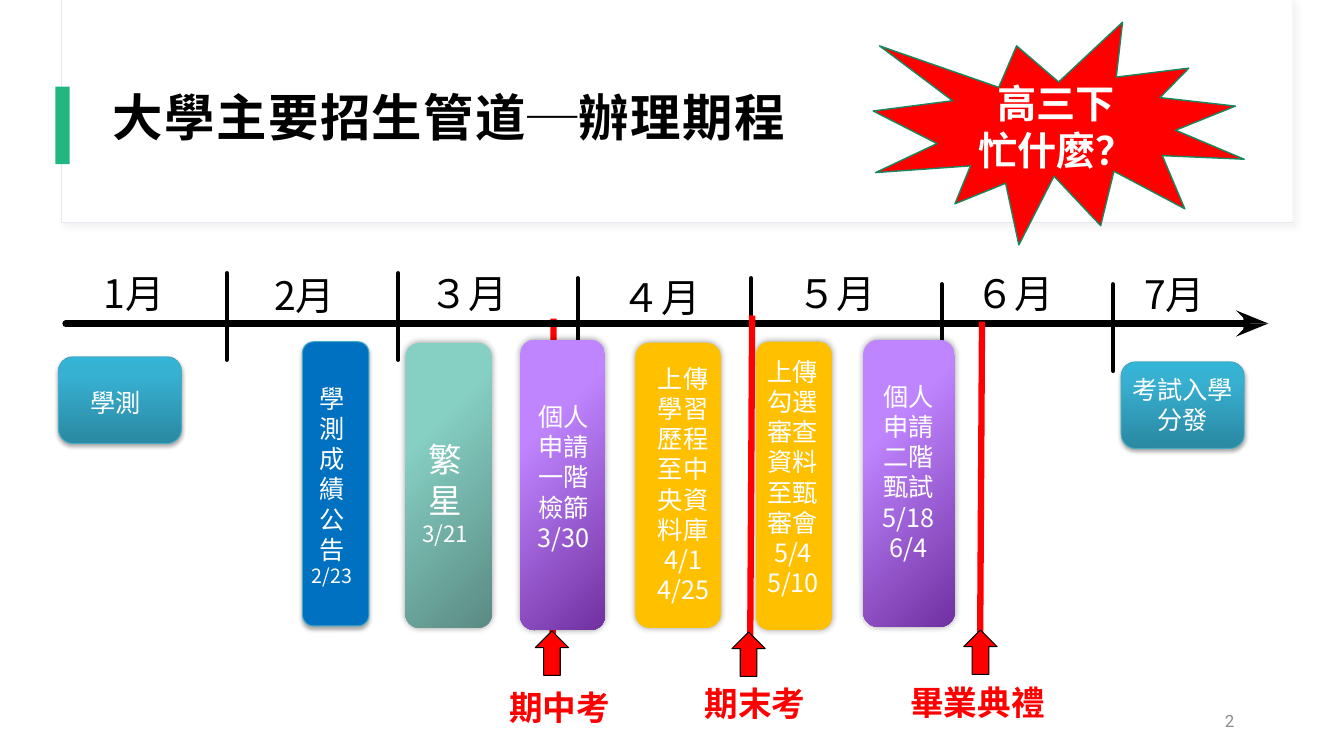
"""Build the admission timeline slide for the final school semester."""
import copy

import pptx
import pptx.dml.color
import pptx.enum.shapes
import pptx.enum.text
import pptx.oxml
import pptx.oxml.ns
import pptx.util

Inches = pptx.util.Inches
Pt = pptx.util.Pt
qn = pptx.oxml.ns.qn
SHAPE = pptx.enum.shapes.MSO_SHAPE
ALIGN = pptx.enum.text.PP_ALIGN
ANCHOR = pptx.enum.text.MSO_ANCHOR
FIT = pptx.enum.text.MSO_AUTO_SIZE

CJK = "Noto Sans CJK SC"
RED, BLACK, WHITE, YELLOW = "FF0000", "000000", "FFFFFF", "FFC000"
GREEN = ((0.29, "86CFC3"), (1, "5A8B83")), 45
PURPLE = ((0.29, "BF85FF"), (1, "7030A0")), 45
TEAL = ((0, "2A88A2"), (0.8, "37B1D2"), (1, "34B4D6")), 270
GLOW = (BLACK, 40, 5, 0, 0)
DROP = (BLACK, 35, 3.1, 1.8, 90)
EDGE = ("46AAC5", 0.75)


def rgb(value):
    return pptx.dml.color.RGBColor.from_string(value)


class TimelineSlide:
    def __init__(self, presentation):
        self.slide = presentation.slides.add_slide(presentation.slide_layouts[5])
        self.shapes = self.slide.shapes

    def place(self, shape, box):
        shape.left, shape.top, shape.width, shape.height = map(Inches, box)

    def set_text(self, shape, paragraphs, size, color=WHITE, font=CJK, bold=False,
                 align=ALIGN.CENTER, anchor=ANCHOR.MIDDLE, fit=FIT.NONE, wrap=True):
        frame = shape.text_frame
        frame.word_wrap, frame.auto_size, frame.vertical_anchor = wrap, fit, anchor
        frame.text = "\n".join(paragraphs)
        for paragraph in frame.paragraphs:
            paragraph.alignment = align
            for run in paragraph.runs:
                self.style(run, size, color, font, bold)

    def style(self, run, size, color=WHITE, font=CJK, bold=False):
        run.font.size, run.font.name, run.font.bold = Pt(size), font, bold
        run.font.color.rgb = rgb(color)
        east_asian = pptx.oxml.parse_xml(
            f'<a:ea {pptx.oxml.ns.nsdecls("a")} typeface="{CJK}"/>')
        run._r.get_or_add_rPr().find(qn("a:latin")).addnext(east_asian)

    def title(self, text, box):
        title = self.shapes.title
        self.place(title, box)
        self.set_text(title, [text], 36, BLACK, bold=True, align=ALIGN.LEFT)
        title.text_frame.paragraphs[0].runs[0]._r.get_or_add_rPr().set("spc", "100")
        title.element.getparent().append(title.element)

    def text(self, paragraphs, box, size, **style):
        text_box = self.shapes.add_textbox(*map(Inches, box))
        self.set_text(text_box, paragraphs, size, **style)
        return text_box

    def label(self, text, box, size, **style):
        return self.text([text], box, size, align=ALIGN.LEFT, anchor=ANCHOR.TOP,
                         fit=FIT.SHAPE_TO_FIT_TEXT, wrap=False, **style)

    def shape(self, kind, box, fill, line=None, shadow=None):
        shape = self.shapes.add_shape(kind, *map(Inches, box))
        self.paint(shape, fill, line)
        if shadow:
            color, alpha, blur, distance, angle = shadow
            effect = pptx.oxml.parse_xml(
                f'<a:outerShdw {pptx.oxml.ns.nsdecls("a")} blurRad="{Pt(blur)}" '
                f'dist="{Pt(distance)}" dir="{angle * 60000}" algn="ctr" rotWithShape="0">'
                f'<a:srgbClr val="{color}"><a:alpha val="{alpha * 1000}"/></a:srgbClr>'
                '</a:outerShdw>')
            shape.element.spPr.find(qn("a:effectLst")).append(effect)
        return shape

    def paint(self, shape, fill, line=None):
        shape.shadow.inherit = False
        if isinstance(fill, str):
            shape.fill.solid()
            shape.fill.fore_color.rgb = rgb(fill)
        else:
            self.gradient(shape, *fill)
        if line:
            shape.line.color.rgb, shape.line.width = rgb(line[0]), Pt(line[1])
        else:
            shape.line.fill.background()

    def gradient(self, shape, stops, angle):
        shape.fill.gradient()
        shape.fill.gradient_angle = 360 - angle
        stop_list = shape.element.spPr.find(".//" + qn("a:gsLst"))
        while len(stop_list) < len(stops):
            stop_list.append(copy.deepcopy(stop_list[-1]))
        for stop, (position, color) in zip(shape.fill.gradient_stops, stops):
            stop.position, stop.color.rgb = position, rgb(color)

    def line(self, start, end, color, width, cap="flat"):
        connector = self.shapes.add_connector(
            pptx.enum.shapes.MSO_CONNECTOR.STRAIGHT, *map(Inches, start + end))
        connector.line.color.rgb, connector.line.width = rgb(color), Pt(width)
        connector.line._get_or_add_ln().set("cap", cap)
        connector.element.spPr.append(pptx.oxml.parse_xml(
            f'<a:effectLst {pptx.oxml.ns.nsdecls("a")}/>'))

    def arrowhead(self, tip, middle):
        for side in (-1, 1):
            points = [(tip - 0.25, middle + side * 0.06), (tip - 0.32, middle + side * 0.13),
                      (tip, middle)]
            builder = self.shapes.build_freeform(
                Inches(tip - 0.24), Inches(middle), scale=1.0)
            builder.add_line_segments([tuple(map(Inches, point)) for point in points])
            self.paint(builder.convert_to_shape(), BLACK)

    def block(self, box, fill, line, shadow, text_box, paragraphs, date=None):
        self.shape(SHAPE.ROUNDED_RECTANGLE, box, fill, line, shadow)
        size = 24 if fill is GREEN else 18
        text = self.text(paragraphs, text_box, size, fit=FIT.SHAPE_TO_FIT_TEXT)
        if date:
            run = text.text_frame.paragraphs[0].add_run()
            run.text = date
            self.style(run, 16 if fill is GREEN else 14)


MONTHS = [("1月", 0.93, 2.62), ("2月", 2.62, 2.64), ("３月", 4.16, 2.62), ("４月", 6.07, 2.66),
          ("５月", 7.81, 2.62), ("６月", 9.58, 2.62), ("7月", 11.25, 2.63)]
TICKS = [(2.25, 2.71), (3.95, 2.71), (5.73, 2.76), (7.45, 2.76), (9.34, 2.82), (11.04, 2.82)]
MIDTERM, *LATER_EVENTS = [
    ("期中考", (5.49, 3.16), (5.48, 6.56), (5.31, 6.26), (4.95, 6.77, 1.21, 0.5)),
    ("期末考", (7.46, 3.13), (7.44, 6.53), (7.26, 6.27), (6.89, 6.73, 1.21, 0.5)),
    ("畢業典禮", (9.74, 3.19), (9.72, 6.59), (9.56, 6.25), (8.93, 6.72, 1.68, 0.5))]
BLOCKS = [
    ((0.58, 3.54, 1.22, 0.86), TEAL, EDGE, DROP, (0.55, 3.79, 1.2, 0.4), ["學測"]),
    ((3, 3.39, 0.66, 2.82), "0070C0", EDGE, DROP, (2.98, 3.74, 0.63, 2.15),
     ["學測成績公告"], "2/23"),
    ((4.02, 3.4, 0.86, 2.83), GREEN, None, GLOW, (4.06, 4.13, 0.71, 1.52), ["繁星"], "3/21"),
    ((5.16, 3.37, 0.84, 2.88), PURPLE, None, GLOW, (5.16, 3.92, 0.86, 1.62),
     ["個人申請", "一階檢篩", "3/30"]),
    ((6.3, 3.4, 0.85, 2.83), YELLOW, None, GLOW, (6.37, 3.54, 0.81, 2.52),
     ["上傳學習歷程至中央資料庫4/1", "4/25"]),
    ((7.5, 3.39, 0.75, 2.86), YELLOW, None, GLOW, (7.46, 3.47, 0.81, 2.52),
     ["上傳勾選審查資料至甄審會", "5/4", "5/10"]),
    ((8.56, 3.37, 0.91, 2.85), PURPLE, None, GLOW, (8.55, 3.44, 0.92, 2.48),
     ["個人申請", "二階甄試", "5/18", "6/4"]),
    ((11.12, 3.59, 1.22, 0.86), TEAL, EDGE, DROP, (11.13, 3.66, 1.2, 0.71), ["考試入學分發"])]


def main():
    presentation = pptx.Presentation()
    presentation.slide_width, presentation.slide_height = Inches(13.33), Inches(7.5)
    timeline = TimelineSlide(presentation)

    timeline.shape(SHAPE.RECTANGLE, (0.61, 0, 12.21, 2.21), WHITE, ("E3E9EF", 0.75),
                   ("D9D9D9", 30, 4, 3, 45))
    timeline.shape(SHAPE.RECTANGLE, (0.62, 0, 12.2, 2.2), WHITE)
    timeline.shape(SHAPE.RECTANGLE, (0.55, 0.86, 0.14, 0.77), "21B780")
    timeline.title("大學主要招生管道─辦理期程", (1.02, 0.72, 8.74, 0.87))
    timeline.text(["2"], (9.34, 6.95, 3, 0.4), 12, color="8C8C8C", font="Roboto",
                  align=ALIGN.RIGHT)

    timeline.line(MIDTERM[1], MIDTERM[2], RED, 4.5)
    timeline.line((0.65, 3.21), (12.37, 3.21), BLACK, 4.5, "rnd")
    timeline.arrowhead(12.58, 3.21)
    for left, top in TICKS:
        timeline.line((left, top), (left, top + 0.86), BLACK, 3, "rnd")
    for month, left, top in MONTHS:
        timeline.label(month, (left, top, 1, 0.57), 28, color=BLACK)
    for block in BLOCKS:
        timeline.block(*block)
    for event in LATER_EVENTS:
        timeline.line(event[1], event[2], RED, 4.5)
    for name, _, _, arrow, label_box in [MIDTERM, *LATER_EVENTS]:
        timeline.shape(SHAPE.UP_ARROW, arrow + (0.33, 0.44), RED, (BLACK, 0.75))
        timeline.label(name, label_box, 24, color=RED, font="Arial", bold=True)

    burst = timeline.shape(SHAPE.EXPLOSION1, (8.66, 0.22, 3.68, 2.21), RED, ("18875F", 1))
    timeline.set_text(burst, ["高三下\v忙什麼？"], 28, font="Roboto", bold=True)
    presentation.save("out.pptx")


if __name__ == "__main__":
    main()
